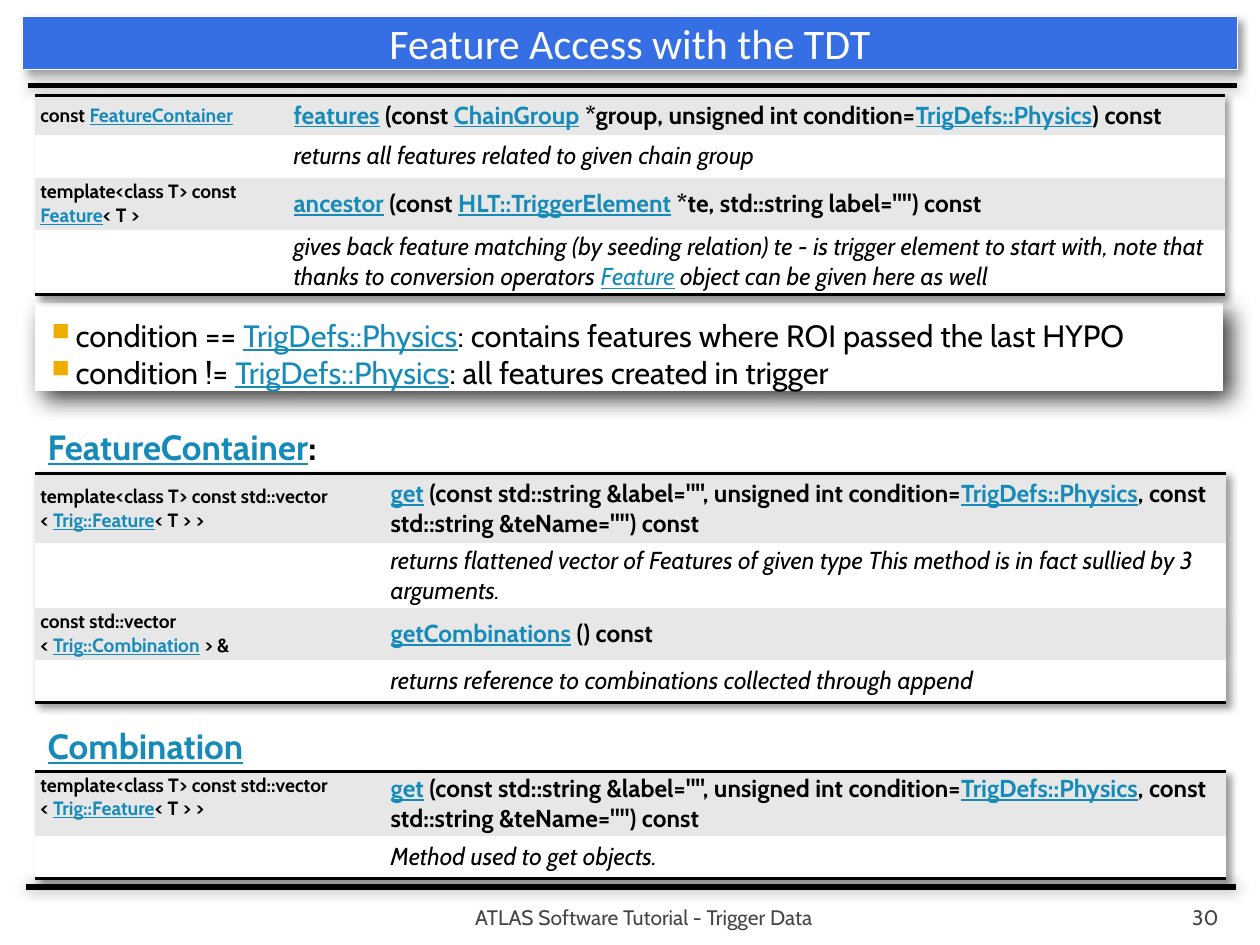
from copy import deepcopy
from lxml.etree import SubElement
from pptx import Presentation
from pptx.dml.color import RGBColor
from pptx.enum.shapes import MSO_CONNECTOR, MSO_SHAPE
from pptx.enum.text import MSO_ANCHOR, PP_ALIGN
from pptx.oxml import parse_xml
from pptx.oxml.ns import nsdecls, qn
from pptx.util import Inches, Pt

HUES = {"black": "000000", "white": "FFFFFF", "link": "168BBA", "band": "E7E7E7",
        "bar": "356FE3", "foot": "454545", "mark": "F0AD00"}
INK = {name: RGBColor.from_string(code) for name, code in HUES.items()}
TOP, MID, LOW = MSO_ANCHOR.TOP, MSO_ANCHOR.MIDDLE, MSO_ANCHOR.BOTTOM

deck = Presentation()
deck.slide_width, deck.slide_height = Inches(10), Inches(7.5)
slide = deck.slides.add_slide(deck.slide_layouts[6])
unit = deck.slide_width // 100  # the grid is 100 columns by 75 rows


def write(para, text, size, hue="black", face="Cabin", bold=False, slant=False):
    """Fill a paragraph; every second part between bars is a link."""
    for n, part in enumerate(text.split("|")):
        for m, line in enumerate(part.split("\n")):
            if m:
                para.add_line_break()
            run = para.add_run()
            run.text = line
            font = run.font
            font.name, font.size, font.bold, font.italic = face, Pt(size), bold, slant
            font.underline = n % 2 == 1
            font.color.rgb = INK["link" if n % 2 else hue]
            if m:
                run._r.getprevious().append(deepcopy(run._r.rPr))


def shade(alpha, blur, dist, angle):
    """Make an outer shadow."""
    return parse_xml(
        f'<a:effectLst {nsdecls("a")}><a:outerShdw blurRad="{Pt(blur)}" dist="{Pt(dist)}" '
        f'dir="{angle * 60000}" algn="tl" rotWithShape="0"><a:srgbClr val="{HUES["black"]}">'
        f'<a:alpha val="{alpha * 1000}"/></a:srgbClr></a:outerShdw></a:effectLst>')


# Rules above and below the content
for left, top in [(2.2, 6.8), (2.1, 70.4)]:
    ends = [round(n * unit) for n in (left, top, left + 96, top)]
    rule = slide.shapes.add_connector(MSO_CONNECTOR.STRAIGHT, *ends)
    rule.line.color.rgb, rule.line.width = INK["black"], Pt(3)
    rule._element.spPr.append(shade(50, 7.5, 0, 0))

# Title bar and condition panel
panels = []
for area, hue, glow in [((1.8, 1.3, 96.4, 4.2), "bar", (40, 4, 3, 45)),
                        ((2.8, 24.1, 94.2, 6.9), "white", (78, 13, 6, 45))]:
    panel = slide.shapes.add_shape(MSO_SHAPE.RECTANGLE, *[round(n * unit) for n in area])
    panel.fill.solid()
    panel.fill.fore_color.rgb = INK[hue]
    panel.line.color.rgb, panel.line.width = INK["white"], Pt(0.75)
    panel._element.spPr.append(shade(*glow))
    panel.text_frame.word_wrap = True
    panels.append(panel.text_frame)
title, body = panels
title.vertical_anchor = MID
title.paragraphs[0].alignment = PP_ALIGN.CENTER
write(title.paragraphs[0], "Feature Access with the TDT", 24, "white", "Calibri")

body.vertical_anchor = TOP
body.margin_left, body.margin_top = Inches(0.06), Inches(0.1)
rules = ["condition == |TrigDefs::Physics|: contains features where ROI passed the last HYPO",
         "condition != |TrigDefs::Physics|: all features created in trigger"]
for n, text in enumerate(rules):
    para = body.add_paragraph() if n else body.paragraphs[0]
    para.alignment = PP_ALIGN.LEFT
    write(para, text, 17.6)
    props = para._p.get_or_add_pPr()
    props.set("marL", str(Inches(0.26)))
    props.set("indent", str(Inches(-0.19)))
    SubElement(SubElement(props, qn("a:buClr")), qn("a:srgbClr"), val=HUES["mark"])
    SubElement(props, qn("a:buSzPct"), val="80000")
    SubElement(props, qn("a:buChar"), char="■")

# Method tables: left, top, column widths, row heights, anchor of the first row, cells
get = ('|get| (const std::string &label="", unsigned int condition=|TrigDefs::Physics|'
       ', const std::string &teName="") const')
vector = "template<class T> const std::vector\n< |Trig::Feature|< T > >"
tables = [
    (7.6, (20.1, 74.3), (3.1, 3.4, 4, 5), (MID, MID), [
        ("const |FeatureContainer|",
         "|features| (const |ChainGroup| *group, unsigned int condition=|TrigDefs::Physics|) const"),
        ("", "returns all features related to given chain group"),
        ("template<class T> const |Feature|< T >",
         '|ancestor| (const |HLT::TriggerElement| *te, std::string label="") const'),
        ("", "gives back feature matching (by seeding relation) te - is trigger element to start "
             "with, note that thanks to conversion operators |Feature| object can be given here "
             "as well")]),
    (37.6, (27.8, 66.7), (5.5, 5.1, 4, 3.4), (MID, MID), [
        (vector, get),
        ("", "returns flattened vector of Features of given type This method is in fact sullied "
             "by 3 arguments."),
        ("const std::vector\n< |Trig::Combination| > &", "|getCombinations| () const"),
        ("", "returns reference to combinations collected through append")]),
    (61.2, (27.8, 66.7), (5.1, 3.4), (TOP, LOW), [
        (vector, get),
        ("", "Method used to get objects.")]),
]
for top, wide, high, anchors, rows in tables:
    area = [round(n * unit) for n in (2.8, top, sum(wide), sum(high))]
    table = slide.shapes.add_table(len(rows), 2, *area).table
    table._tbl.tblPr.insert(0, shade(40, 4, 3, 45))
    for col, size in zip(table.columns, wide):
        col.width = round(size * unit)
    for r, texts in enumerate(rows):
        table.rows[r].height = round(high[r] * unit)
        note = r % 2 == 1
        for c, text in enumerate(texts):
            cell = table.cell(r, c)
            cell.margin_left = cell.margin_right = Inches(0.04)
            cell.margin_top = cell.margin_bottom = Inches(0.02)
            cell.vertical_anchor = MID if r else anchors[c]
            write(cell.text_frame.paragraphs[0], text, 14 if c else 11, bold=not note, slant=note)
            props = cell._tc.get_or_add_tcPr()
            for side in ("lnL", "lnR", "lnT", "lnB"):
                edge = SubElement(props, qn("a:" + side), w=str(Pt(2)))
                if (side, r) in [("lnT", 0), ("lnB", len(rows) - 1)]:
                    paint = SubElement(edge, qn("a:solidFill"))
                    SubElement(paint, qn("a:srgbClr"), val=HUES["black"])
                else:
                    SubElement(edge, qn("a:noFill"))
            cell.fill.solid()
            cell.fill.fore_color.rgb = INK["white" if note else "band"]

# Table headings
for text, area in [("|FeatureContainer|:", (2.8, 33.3, 24.1, 4.4)),
                   ("|Combination|", (2.8, 57, 17.8, 4.4))]:
    box = slide.shapes.add_textbox(*[round(n * unit) for n in area])
    write(box.text_frame.paragraphs[0], text, 20, bold=True)

# Footer and slide number
for text, area, align, pad in [
        ("ATLAS Software Tutorial - Trigger Data", (21, 70.8, 60.2, 3), PP_ALIGN.CENTER, 0.05),
        ("30", (89.7, 70.8, 8, 3), PP_ALIGN.RIGHT, 0.1)]:
    frame = slide.shapes.add_textbox(*[round(n * unit) for n in area]).text_frame
    frame.word_wrap, frame.vertical_anchor = True, LOW
    frame.margin_left = frame.margin_right = Inches(pad)
    frame.margin_bottom = 0
    frame.paragraphs[0].alignment = align
    write(frame.paragraphs[0], text, 12, "foot")

deck.save("out.pptx")
